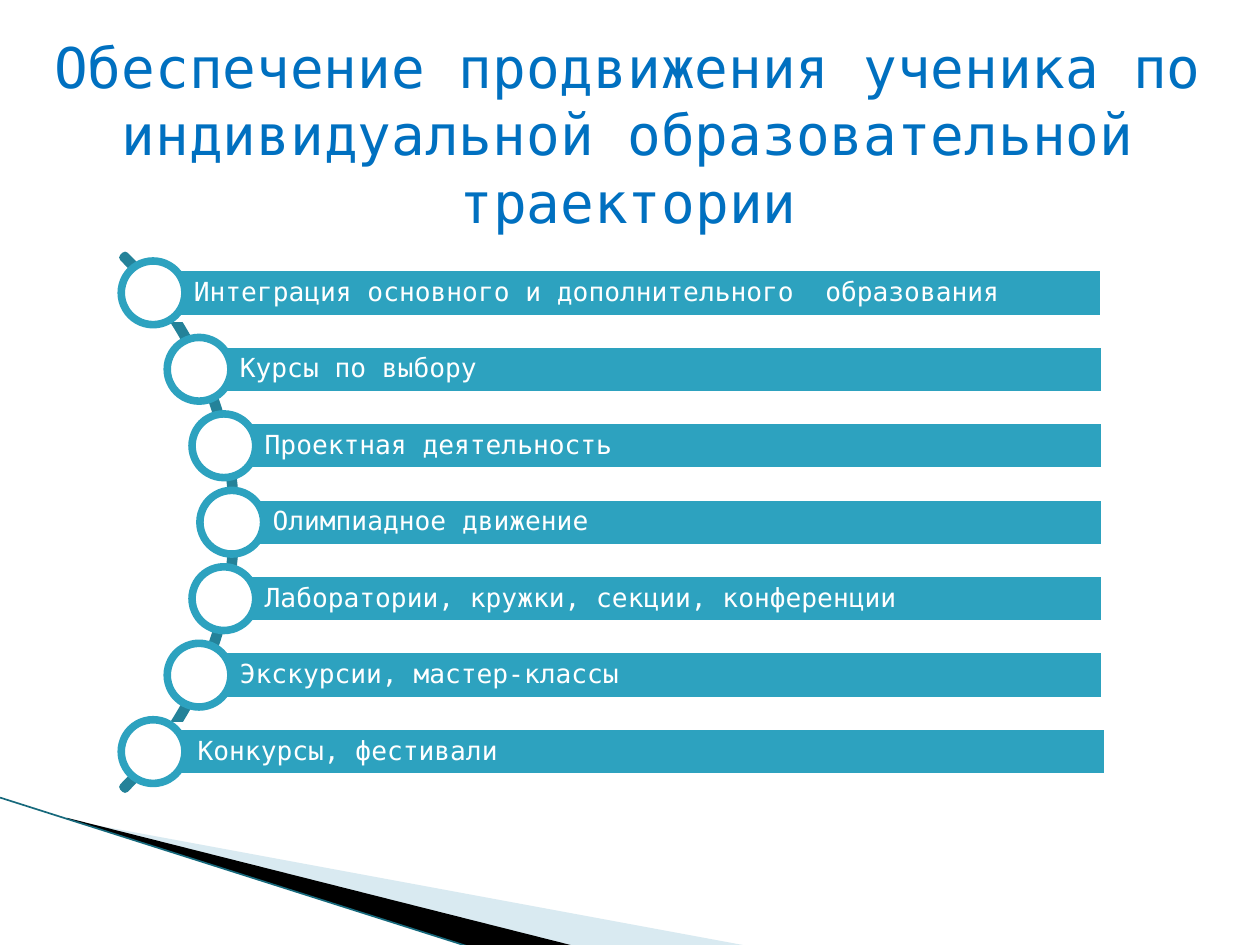
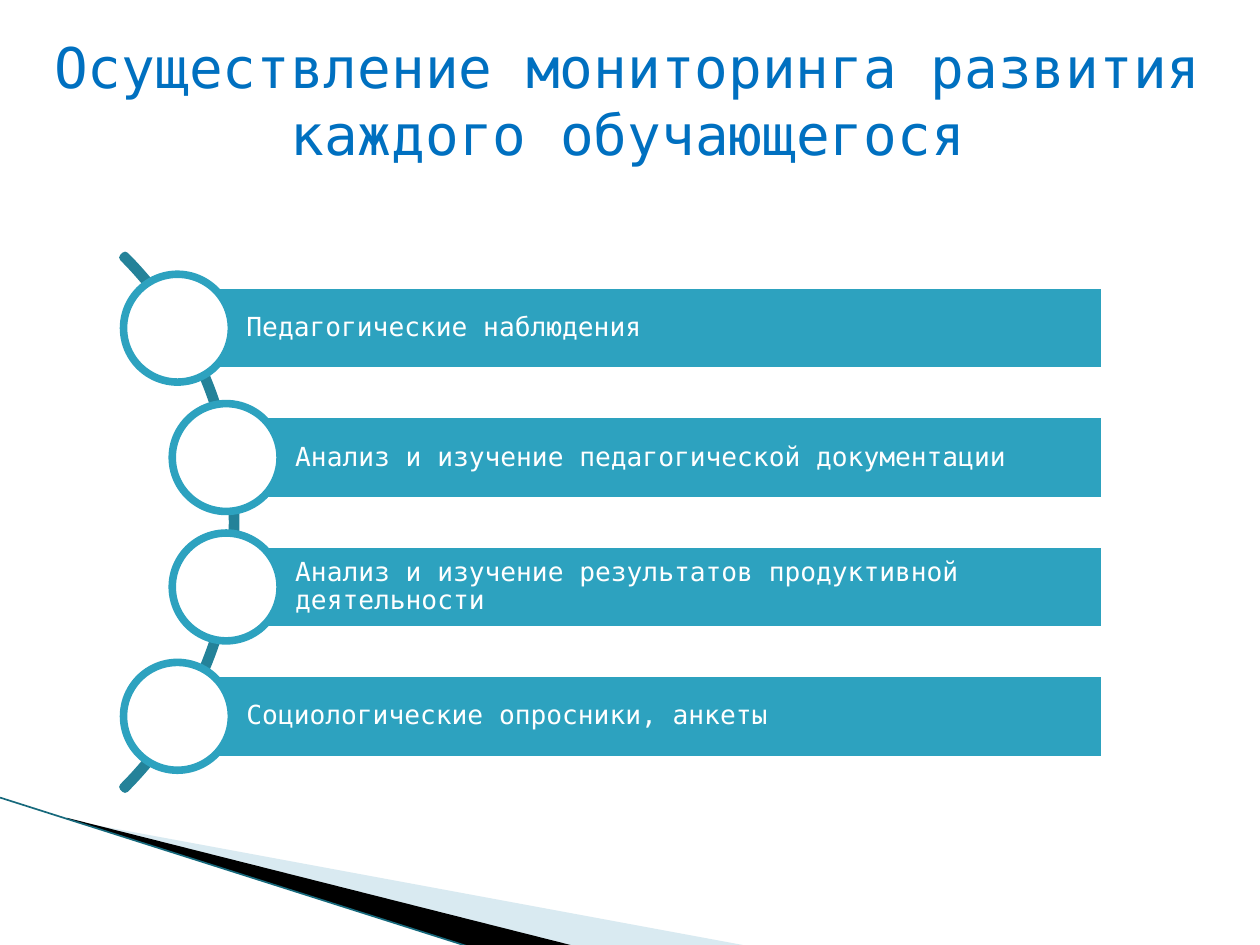
from math import sqrt

from lxml import etree
from pptx import Presentation
from pptx.dml.color import RGBColor
from pptx.enum.shapes import MSO_CONNECTOR, MSO_SHAPE
from pptx.enum.text import MSO_ANCHOR, PP_ALIGN
from pptx.oxml.ns import qn
from pptx.util import Inches, Pt

RECT, OVAL, ARC = MSO_SHAPE.RECTANGLE, MSO_SHAPE.OVAL, MSO_SHAPE.BLOCK_ARC
STRAIGHT = MSO_CONNECTOR.STRAIGHT
TOP, MIDDLE = MSO_ANCHOR.TOP, MSO_ANCHOR.MIDDLE
LEFT, CENTER = PP_ALIGN.LEFT, PP_ALIGN.CENTER

# Grid of 100 columns by 75 rows; every length below is in grid units.
UNIT = Inches(0.1)
COLS, ROWS = 100, 75

FONT = "DejaVu Sans Mono"
WHITE, BLACK = "FFFFFF", "000000"
TITLE_BLUE, TEAL, DARK_TEAL = "0070C0", "2DA2BF", "248299"
PALE_BLUE, EDGE_TEAL = "A0CBDC", "17697C"
OUTLINE = 4.33

TITLE_BOX = (2, 2.1, 95.7, 17.2)
LIST_BOX = (9, 19.2, 78.65, 44.5)
WEDGE_BOX = (0, 63.3, 59.5, 11.8)


def units(*values):
    return [round(v * UNIT) for v in values]


def rgb(value):
    return RGBColor.from_string(value)


def paint(sp, fill=None, line=None, alpha=None):
    sp.shadow.inherit = False
    if fill:
        sp.fill.solid()
        sp.fill.fore_color.rgb = rgb(fill)
    else:
        sp.fill.background()
    if alpha:
        color = sp.fill._xPr.find(qn("a:solidFill"))[0]
        etree.SubElement(color, qn("a:alpha"), val=str(alpha * 1000))
    if line:
        sp.line.color.rgb = rgb(line)
        sp.line.width = Pt(OUTLINE)
    else:
        sp.line.fill.background()
    return sp


def add_shape(slide, kind, box, **colors):
    return paint(slide.shapes.add_shape(kind, *units(*box)), **colors)


def write(sp, text, size, color, align=LEFT, anchor=TOP, spacing=1.0, insets=None):
    tf = sp.text_frame
    tf.word_wrap = True
    tf.vertical_anchor = anchor
    if insets:
        (tf.margin_left, tf.margin_top,
         tf.margin_right, tf.margin_bottom) = units(*insets)
    p = tf.paragraphs[0]
    p.alignment = align
    p.line_spacing = spacing
    r = p.add_run()
    r.text = text
    r.font.name, r.font.size = FONT, Pt(size)
    r.font.color.rgb = rgb(color)


def add_wedges(slide, box):
    """Draw the tapering corner decoration."""
    left, top, width, height = box

    def wedge(points, fill, alpha=None):
        start, *rest = [units(left + x, top + y) for x, y in points]
        builder = slide.shapes.build_freeform(*start)
        builder.add_line_segments(rest)
        paint(builder.convert_to_shape(), fill=fill, alpha=alpha)

    wedge([(5.5, 1.8), (width, height), (45.6, height), (5.5, 1.7)], PALE_BLUE, 40)
    wedge([(5.3, 1.6), (45.7, height), (37.2, height), (5.4, 1.7)], BLACK)
    edge = slide.shapes.add_connector(
        STRAIGHT, *units(left, top, left + 37.1, top + height))
    edge.line.color.rgb = rgb(EDGE_TEAL)
    edge.line.width = Pt(0.95)
    etree.SubElement(edge._element.spPr, qn("a:effectLst"))


def add_title(slide, text, box):
    sp = slide.shapes.add_textbox(*units(*box))
    write(sp, text, 32, TITLE_BLUE, align=CENTER)


def add_curved_list(slide, items, box, last_shift=0):
    """Hang bars with round markers along an arc that bulges to the right."""
    left, top, width, height = box
    arc_x, arc_y = left - 20.25, top + height / 2
    arc_size = 59.9
    marker_radius = arc_size / 2 - 0.3
    arc = add_shape(
        slide, ARC,
        (arc_x - arc_size / 2, arc_y - arc_size / 2, arc_size, arc_size),
        line=DARK_TEAL)
    for i, value in enumerate((189, 27, 0.004)):
        arc.adjustments[i] = value

    count = len(items)
    bar = height / (1.5 * count + 0.5)
    marker = 1.25 * bar
    for i, text in enumerate(items):
        dy = (i - (count - 1) / 2) * 1.5 * bar
        x, y = arc_x + sqrt(marker_radius ** 2 - dy ** 2), arc_y + dy
        shift = last_shift if i == count - 1 else 0
        sp = add_shape(slide, RECT,
                       (x + shift, y - bar / 2, left + width - x, bar),
                       fill=TEAL, line=WHITE)
        write(sp, text, 15, WHITE, anchor=MIDDLE, spacing=0.9,
              insets=(0.8 * bar, 0.4, 0.4, 0.4))
        add_shape(slide, OVAL,
                  (x - marker / 2, y - marker / 2, marker, marker),
                  fill=WHITE, line=TEAL)


def add_list_slide(prs, title, items, last_shift=0):
    slide = prs.slides.add_slide(prs.slide_layouts[6])
    add_wedges(slide, WEDGE_BOX)
    add_curved_list(slide, items, LIST_BOX, last_shift)
    add_title(slide, title, TITLE_BOX)


def main():
    prs = Presentation()
    prs.slide_width, prs.slide_height = units(COLS, ROWS)
    add_list_slide(
        prs,
        "Обеспечение продвижения ученика по индивидуальной образовательной траектории",
        ["Интеграция основного и дополнительного  образования",
         "Курсы по выбору",
         "Проектная деятельность",
         "Олимпиадное движение",
         "Лаборатории, кружки, секции, конференции",
         "Экскурсии, мастер-классы",
         "Конкурсы, фестивали"],
        last_shift=0.3)
    add_list_slide(
        prs,
        "Осуществление мониторинга развития каждого обучающегося",
        ["Педагогические наблюдения",
         "Анализ и изучение педагогической документации",
         "Анализ и изучение результатов продуктивной деятельности",
         "Социологические опросники, анкеты"])
    prs.save("out.pptx")


if __name__ == "__main__":
    main()
